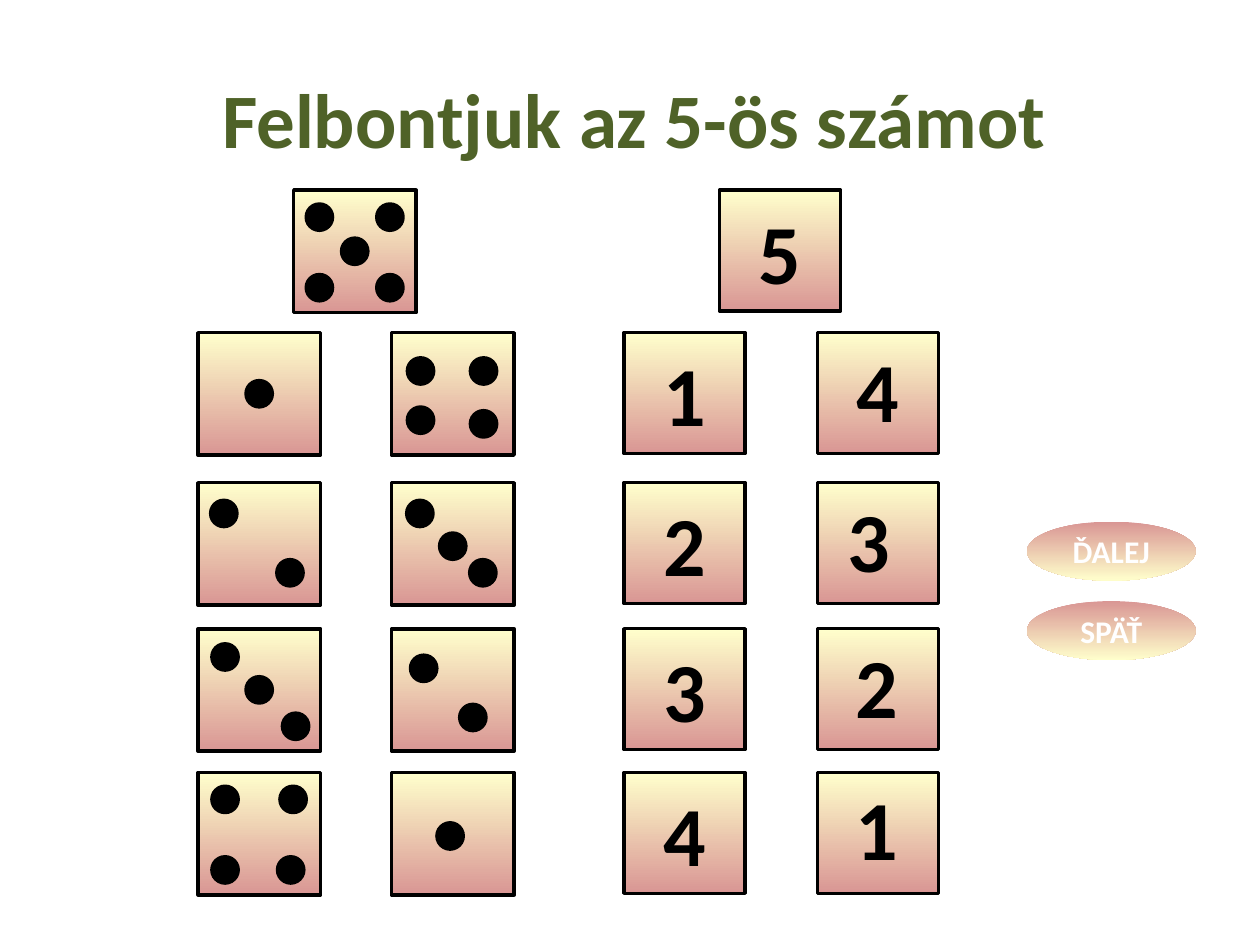
from pptx import Presentation
from pptx.dml.color import RGBColor
from pptx.enum.shapes import MSO_SHAPE as Shape
from pptx.enum.text import MSO_ANCHOR as Anchor, MSO_AUTO_SIZE as AutoSize, PP_ALIGN as Align
from pptx.util import Pt

BLACK = RGBColor(0, 0, 0)
WHITE = RGBColor(255, 255, 255)
GREEN = RGBColor(0x4F, 0x62, 0x28)
CREAM = RGBColor(0xFF, 0xFF, 0xCC)
ROSE = RGBColor(0xD9, 0x96, 0x94)

DIE, CARD, DOT = 70, 69.1, 15
CARD_SHIFT = 243.4
LEFT, RIGHT = 113.2, 223.8
TOTAL = (167.8, 108.7, 5, [(7.2, 7.9), (47.5, 7.9), (27.4, 27.4), (7.2, 48.2), (47.5, 48.2)])
LEFT_PARTS = [
    (LEFT, 190.1, 1, [(27.4, 27.4)]),
    (LEFT, 275.8, 2, [(7.2, 10.1), (45, 44)]),
    (LEFT, 359.3, 3, [(7.9, 8.6), (27.4, 27.4), (48.2, 48.2)]),
    (LEFT, 441.4, 4, [(7.9, 7.9), (46.8, 7.9), (7.9, 48.2), (45.4, 48.2)]),
]
RIGHT_PARTS = [
    (RIGHT, 190.1, 4, [(9, 14.4), (45, 14.4), (9, 42.5), (45, 44.6)]),
    (RIGHT, 275.8, 3, [(8.6, 10.1), (27.4, 28.8), (44.6, 44)]),
    (RIGHT, 359.3, 2, [(10.8, 15.1), (38.9, 43.2)]),
    (RIGHT, 441.4, 1, [(25.9, 28.8)]),
]
DIGIT_OFFSETS = [(15, 0), (10, 0), (14.4, 0), (14.4, -1.4)]


def write(shape, text, size, color, anchor):
    """Put one centred bold line into a shape."""
    frame = shape.text_frame
    frame.word_wrap = True
    frame.auto_size = AutoSize.NONE
    frame.vertical_anchor = anchor
    frame.text = text
    paragraph = frame.paragraphs[0]
    paragraph.alignment = Align.CENTER
    font = paragraph.font
    font.name, font.size, font.bold = "Calibri", Pt(size), True
    font.color.rgb = color


def add_shape(slide, kind, left, top, width, height, colors, outlined=True):
    """Add a preset shape with a solid fill or a downward gradient."""
    shape = slide.shapes.add_shape(kind, Pt(left), Pt(top), Pt(width), Pt(height))
    shape.shadow.inherit = False
    if len(colors) == 1:
        shape.fill.solid()
        shape.fill.fore_color.rgb = colors[0]
    else:
        shape.fill.gradient()
        shape.fill.gradient_angle = 270
        for stop, color in zip(shape.fill.gradient_stops, colors):
            stop.color.rgb = color
    if outlined:
        shape.line.color.rgb = BLACK
        shape.line.width = Pt(2)
    else:
        shape.line.fill.background()
    return shape


def add_die(slide, left, top, dots):
    """Draw a die face with dots placed relative to its corner."""
    add_shape(slide, Shape.RECTANGLE, left, top, DIE, DIE, [CREAM, ROSE])
    for x, y in dots:
        add_shape(slide, Shape.OVAL, left + x, top + y, DOT, DOT, [BLACK])


def add_card(slide, left, top, digit, digit_offset=None):
    """Draw a number card, with its digit inside or in an offset text box."""
    card = add_shape(slide, Shape.RECTANGLE, left, top, CARD, CARD, [CREAM, ROSE])
    if digit_offset is None:
        write(card, str(digit), 48, BLACK, Anchor.MIDDLE)
    else:
        x, y = digit_offset
        label = slide.shapes.add_textbox(Pt(left + x), Pt(top + y), Pt(38.9), Pt(64.8))
        write(label, str(digit), 48, BLACK, Anchor.TOP)


def add_title(slide, left, top, width, height):
    """Place and format the title placeholder."""
    title = slide.shapes.title
    title.left, title.top, title.width, title.height = map(Pt, (left, top, width, height))
    write(title, "Felbontjuk az 5-ös számot", 44, GREEN, Anchor.TOP)


def add_buttons(slide, left, top, width, height, pitch):
    """Stack the oval navigation buttons."""
    for index, text in enumerate(["ĎALEJ", "SPÄŤ"]):
        button = add_shape(slide, Shape.OVAL, left, top + index * pitch, width, height,
                           [ROSE, CREAM], outlined=False)
        write(button, text, 18, WHITE, Anchor.MIDDLE)


def main():
    """Build the number decomposition slide."""
    presentation = Presentation()
    presentation.slide_width, presentation.slide_height = Pt(720), Pt(540)
    slide = presentation.slides.add_slide(presentation.slide_layouts[5])
    add_buttons(slide, 586.8, 298.1, 96.5, 33.8, 45.4)
    add_title(slide, 36, 37.4, 653, 74.2)
    for left, top, digit, dots in [TOTAL] + LEFT_PARTS:
        add_die(slide, left, top, dots)
        add_card(slide, left + CARD_SHIFT, top, digit)
    for (left, top, digit, dots), offset in zip(RIGHT_PARTS, DIGIT_OFFSETS):
        add_die(slide, left, top, dots)
        add_card(slide, left + CARD_SHIFT, top, digit, offset)
    presentation.save("out.pptx")


if __name__ == "__main__":
    main()
